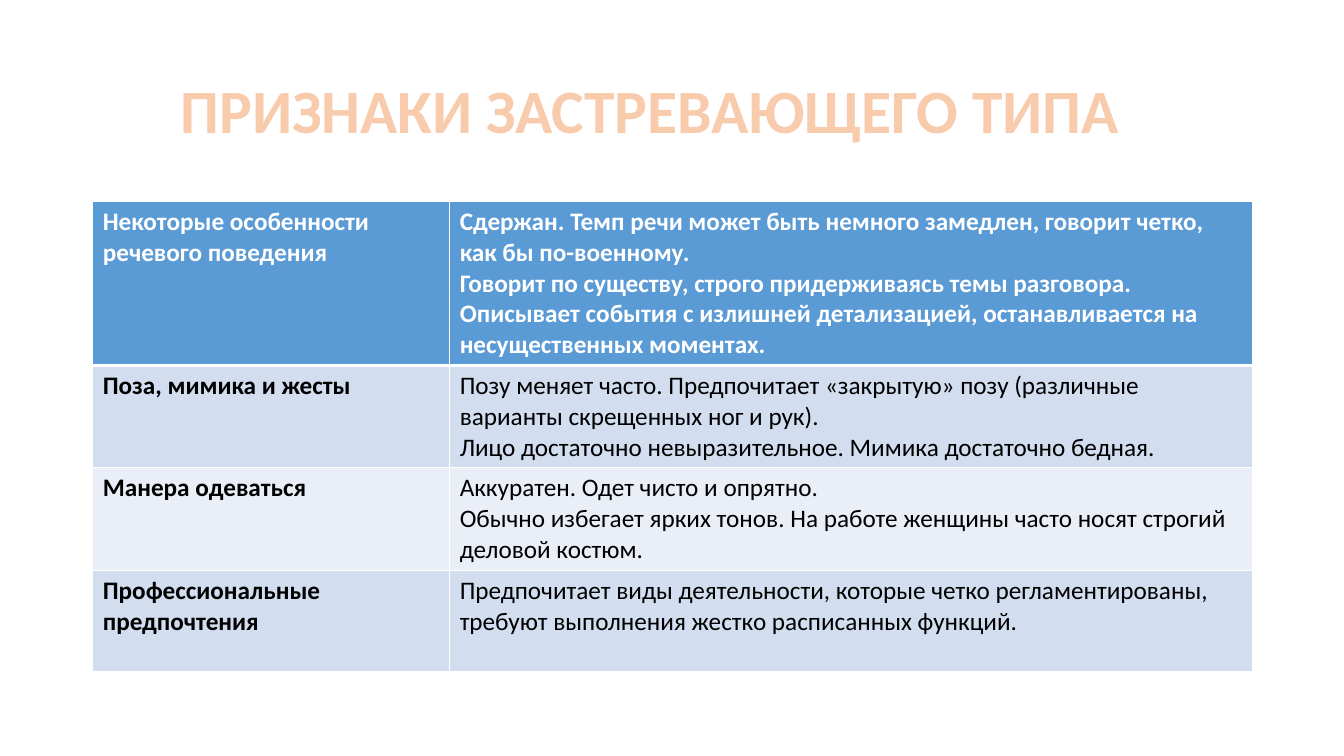
from dataclasses import dataclass

from lxml import etree
from pptx import Presentation
from pptx.dml.color import RGBColor
from pptx.enum import text
from pptx.oxml.ns import qn
from pptx.util import Inches, Pt

WHITE = RGBColor(0xFF, 0xFF, 0xFF)
BLACK = RGBColor(0, 0, 0)
BLUE = RGBColor(0x5B, 0x9B, 0xD5)
PALE = RGBColor(0xD2, 0xDE, 0xEF)
LIGHT = RGBColor(0xEA, 0xEF, 0xF7)
PEACH = RGBColor(0xF8, 0xCB, 0xAD)
ORANGE = RGBColor(0xED, 0x7D, 0x31)

FONT = "Calibri"
LEFT, WIDTH = 0.92, 11.5
COLS = (3.54, 7.96)


@dataclass
class Trait:
    name: str
    notes: str
    fill: RGBColor
    height: float = 1.01
    head: bool = False


TRAITS = [
    Trait("Некоторые особенности речевого поведения",
          "Сдержан. Темп речи может быть немного замедлен, говорит четко, "
          "как бы по-военному.\n"
          "Говорит по существу, строго придерживаясь темы разговора. "
          "Описывает события с излишней детализацией, останавливается на "
          "несущественных моментах.", BLUE, 1.62, True),
    Trait("Поза, мимика и жесты",
          "Позу меняет часто. Предпочитает «закрытую» позу (различные "
          "варианты скрещенных ног и рук).\n"
          "Лицо достаточно невыразительное. Мимика достаточно бедная.", PALE),
    Trait("Манера одеваться",
          "Аккуратен. Одет чисто и опрятно.\n"
          "Обычно избегает ярких тонов. На работе женщины часто носят "
          "строгий деловой костюм.", LIGHT),
    Trait("Профессиональные предпочтения",
          "Предпочитает виды деятельности, которые четко регламентированы, "
          "требуют выполнения жестко расписанных функций.", PALE),
]


def add_line(props, tag: str, color: RGBColor, width: float) -> None:
    """Add a solid line element, such as a cell border or text outline."""
    line = etree.SubElement(props, qn(tag), w=str(Pt(width)))
    fill = etree.SubElement(line, qn("a:solidFill"))
    etree.SubElement(fill, qn("a:srgbClr"), val=str(color))


def set_font(para, size: float, color: RGBColor, bold: bool) -> None:
    font = para.font
    font.name, font.size, font.bold = FONT, Pt(size), bold
    font.color.rgb = color


def add_title(slide) -> None:
    title = slide.shapes.title
    title.left, title.top = Inches(LEFT), Inches(0.4)
    title.width, title.height = Inches(WIDTH), Inches(1.45)
    frame = title.text_frame
    frame.text = "ПРИЗНАКИ ЗАСТРЕВАЮЩЕГО ТИПА"
    frame.auto_size = text.MSO_AUTO_SIZE.NONE
    frame.vertical_anchor = text.MSO_ANCHOR.MIDDLE
    frame.margin_left = Inches(0.87)
    para = frame.paragraphs[0]
    para.alignment = text.PP_ALIGN.LEFT
    para.line_spacing = 0.9
    set_font(para, 44, PEACH, True)
    add_line(para.runs[0].font._element, "a:ln", ORANGE, 1.75)


def fill_cell(cell, words: str, trait: Trait, bold: bool, above: float) -> None:
    cell.text = words
    for para in cell.text_frame.paragraphs:
        set_font(para, 18, WHITE if trait.head else BLACK, bold)
    props = cell._tc.get_or_add_tcPr()
    below = 3 if trait.head else 1
    for side, width in zip("LRTB", (1, 1, above, below)):
        add_line(props, f"a:ln{side}", WHITE, width)
    cell.fill.solid()
    cell.fill.fore_color.rgb = trait.fill


def add_traits(slide) -> None:
    high = sum(trait.height for trait in TRAITS)
    table = slide.shapes.add_table(
        len(TRAITS), len(COLS), Inches(LEFT), Inches(2),
        Inches(WIDTH), Inches(high)).table
    for col, width in zip(table.columns, COLS):
        col.width = Inches(width)
    above = 1
    for row, trait in zip(table.rows, TRAITS):
        row.height = Inches(trait.height)
        name, notes = row.cells
        fill_cell(name, trait.name, trait, True, above)
        fill_cell(notes, trait.notes, trait, trait.head, above)
        above = 3 if trait.head else 1


def main() -> None:
    deck = Presentation()
    deck.slide_width, deck.slide_height = Inches(13.33), Inches(7.5)
    slide = deck.slides.add_slide(deck.slide_layouts.get_by_name("Title Only"))
    add_title(slide)
    add_traits(slide)
    deck.save("out.pptx")


if __name__ == "__main__":
    main()
